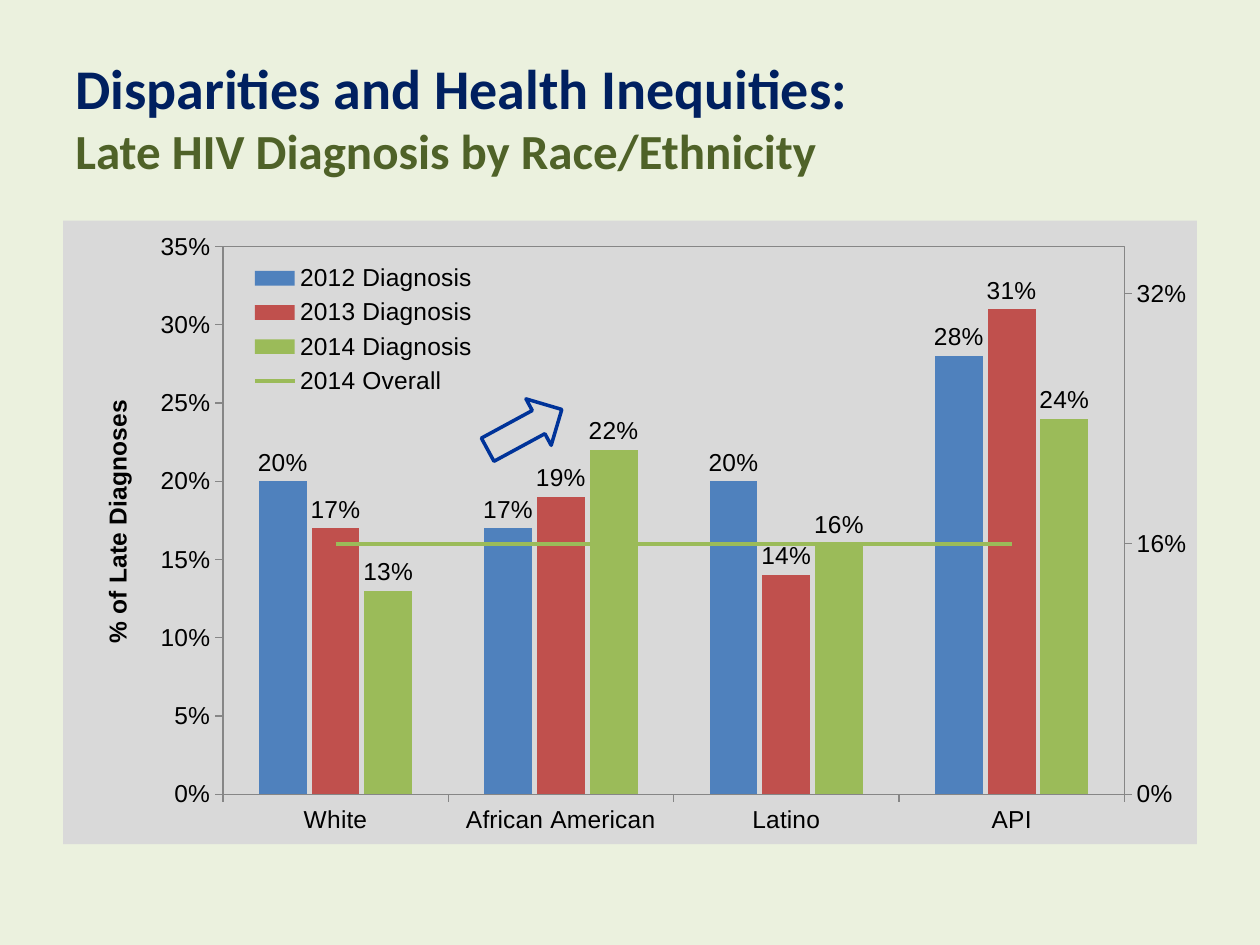
"""Build a slide with a chart of late HIV diagnosis by race and ethnicity."""
import pptx
import pptx.chart.data
import pptx.dml.color
import pptx.enum.chart
import pptx.enum.shapes
import pptx.enum.text
import pptx.oxml
import pptx.oxml.ns
import pptx.util

Pt = pptx.util.Pt
RGB = pptx.dml.color.RGBColor
enum = pptx.enum.chart
qn = pptx.oxml.ns.qn

CREAM = RGB(0xEB, 0xF1, 0xDE)
NAVY = RGB(0x00, 0x20, 0x60)
OLIVE = RGB(0x4F, 0x62, 0x28)
BLACK = RGB(0, 0, 0)
GRAY = RGB(0x86, 0x86, 0x86)
SILVER = RGB(0xD9, 0xD9, 0xD9)
BLUE = RGB(0x4F, 0x81, 0xBD)
RED = RGB(0xC0, 0x50, 0x4D)
GREEN = RGB(0x9B, 0xBB, 0x59)
ROYAL = RGB(0x00, 0x33, 0x99)


def parse(body):
    head, tail = body.split(">", 1)
    spaces = pptx.oxml.ns.nsdecls("c", "a")
    return pptx.oxml.parse_xml(f"{head} {spaces}>{tail}")


def layout(x, y, w=None, h=None, inner=False):
    body = '<c:layoutTarget val="inner"/>' if inner else ""
    body += '<c:xMode val="edge"/><c:yMode val="edge"/>'
    for tag, val in zip("xywh", (x, y, w, h)):
        if val is not None:
            body += f'<c:{tag} val="{val}"/>'
    return parse(f"<c:layout><c:manualLayout>{body}</c:manualLayout></c:layout>")


deck = pptx.Presentation()
deck.slide_width, deck.slide_height = Pt(720), Pt(540)
slide = deck.slides.add_slide(deck.slide_layouts[6])
slide.background.fill.solid()
slide.background.fill.fore_color.rgb = CREAM

box = slide.shapes.add_textbox(Pt(36), Pt(21.6), Pt(648), Pt(90))
frame = box.text_frame
frame.word_wrap = True
frame.vertical_anchor = pptx.enum.text.MSO_ANCHOR.MIDDLE
para = frame.paragraphs[0]
heads = [("Disparities and Health Inequities:", 32, NAVY),
         ("Late HIV Diagnosis by Race/Ethnicity", 28, OLIVE)]
for text, size, color in heads:
    if para.runs:
        para.add_line_break()
    run = para.add_run()
    run.text = text
    run.font.name, run.font.size, run.font.bold = "Calibri", Pt(size), True
    run.font.color.rgb = color

rows = [("2012 Diagnosis", (0.20, 0.17, 0.20, 0.28), BLUE),
        ("2013 Diagnosis", (0.17, 0.19, 0.14, 0.31), RED),
        ("2014 Diagnosis", (0.13, 0.22, 0.16, 0.24), GREEN),
        ("2014 Overall", (0.16,) * 4, GREEN)]
data = pptx.chart.data.CategoryChartData(number_format="0%")
data.categories = ["White", "African American", "Latino", "API"]
for name, vals, color in rows:
    data.add_series(name, vals)
chart = slide.shapes.add_chart(
    enum.XL_CHART_TYPE.COLUMN_CLUSTERED,
    Pt(36), Pt(126), Pt(648), Pt(356.4), data).chart
chart.has_title = False
chart.font.name, chart.font.size = "Arial", Pt(14)
chart.font.color.rgb = BLACK

bars = chart.plots[0]
bars.vary_by_categories = False
bars.gap_width, bars.overlap = 150, -10
for series, (name, vals, color) in zip(list(bars.series)[:3], rows):
    series.format.fill.solid()
    series.format.fill.fore_color.rgb = color
    labels = series.data_labels
    labels.show_value = True
    labels.position = enum.XL_LABEL_POSITION.OUTSIDE_END
    labels.number_format, labels.number_format_is_linked = "0%", False

left = chart.value_axis
left.minimum_scale, left.maximum_scale, left.major_unit = 0, 0.35, 0.05
left.has_major_gridlines = False
left.tick_labels.number_format = "0%"
left.tick_labels.number_format_is_linked = False
for axis in (left, chart.category_axis):
    axis.major_tick_mark = enum.XL_TICK_MARK.OUTSIDE
    axis.format.line.color.rgb = GRAY
    axis.format.line.width = Pt(0.75)
title = left.axis_title
run = title.text_frame.paragraphs[0].add_run()
run.text = "% of Late Diagnoses"
run.font.name, run.font.size, run.font.bold = "Arial", Pt(14), True
run.font.color.rgb = BLACK
node = title._element
for old in node.findall(qn("c:layout")):
    node.remove(old)
node.find(qn("c:tx")).addnext(layout(0.03, 0.28))

chart.has_legend = True
legend = chart.legend
legend.position = enum.XL_LEGEND_POSITION.RIGHT
legend.include_in_layout = False
legend.font.name, legend.font.size = "Arial", Pt(14)
legend.font.color.rgb = BLACK
node = legend._element
for old in node.findall(qn("c:layout")):
    node.remove(old)
node.find(qn("c:legendPos")).addnext(layout(0.16, 0.06, 0.21, 0.23))

edge = (f'<a:ln w="9525"><a:solidFill><a:srgbClr val="{GRAY}"/>'
        '</a:solidFill></a:ln>')
line = parse(
    '<c:lineChart><c:grouping val="standard"/><c:varyColors val="0"/>'
    '<c:marker val="1"/><c:axId val="5001"/><c:axId val="5002"/></c:lineChart>')
last = bars.series[3]._element
for old in last.findall(qn("c:invertIfNegative")):
    last.remove(old)
line.insert(2, last)
bars._element.addnext(line)
plot = line.getparent()
for old in plot.findall(qn("c:layout")):
    plot.remove(old)
plot.insert(0, layout(0.141, 0.042, 0.795, 0.878, True))
right = parse(
    '<c:valAx><c:axId val="5002"/><c:scaling><c:orientation val="minMax"/>'
    '<c:max val="0.35"/><c:min val="0"/></c:scaling><c:delete val="0"/>'
    '<c:axPos val="r"/><c:numFmt formatCode="0%" sourceLinked="0"/>'
    '<c:majorTickMark val="out"/><c:minorTickMark val="none"/>'
    f'<c:tickLblPos val="nextTo"/><c:spPr>{edge}</c:spPr>'
    '<c:crossAx val="5001"/><c:crosses val="max"/>'
    '<c:crossBetween val="between"/><c:majorUnit val="0.16"/></c:valAx>')
base = parse(
    '<c:catAx><c:axId val="5001"/><c:scaling><c:orientation val="minMax"/>'
    '</c:scaling><c:delete val="1"/><c:axPos val="b"/>'
    '<c:majorTickMark val="none"/><c:minorTickMark val="none"/>'
    '<c:tickLblPos val="nextTo"/><c:crossAx val="5002"/>'
    '<c:crosses val="autoZero"/></c:catAx>')
rim = parse(f'<c:spPr><a:noFill/>{edge}</c:spPr>')
plot.findall(qn("c:valAx"))[-1].addnext(right)
right.addnext(base)
base.addnext(rim)
plot.getparent().addnext(parse(
    f'<c:spPr><a:solidFill><a:srgbClr val="{SILVER}"/></a:solidFill>'
    '<a:ln><a:noFill/></a:ln></c:spPr>'))

mean = chart.plots[1].series[0]
mean.smooth = False
mean.marker.style = enum.XL_MARKER_STYLE.NONE
mean.format.line.color.rgb = GREEN
mean.format.line.width = Pt(2.25)

arrow = slide.shapes.add_shape(
    pptx.enum.shapes.MSO_SHAPE.RIGHT_ARROW,
    Pt(275.8), Pt(230.4), Pt(48.2), Pt(30.2))
arrow.rotation = 331.5
arrow.shadow.inherit = False
arrow.fill.background()
arrow.line.color.rgb = ROYAL
arrow.line.width = Pt(2)

deck.save("out.pptx")
